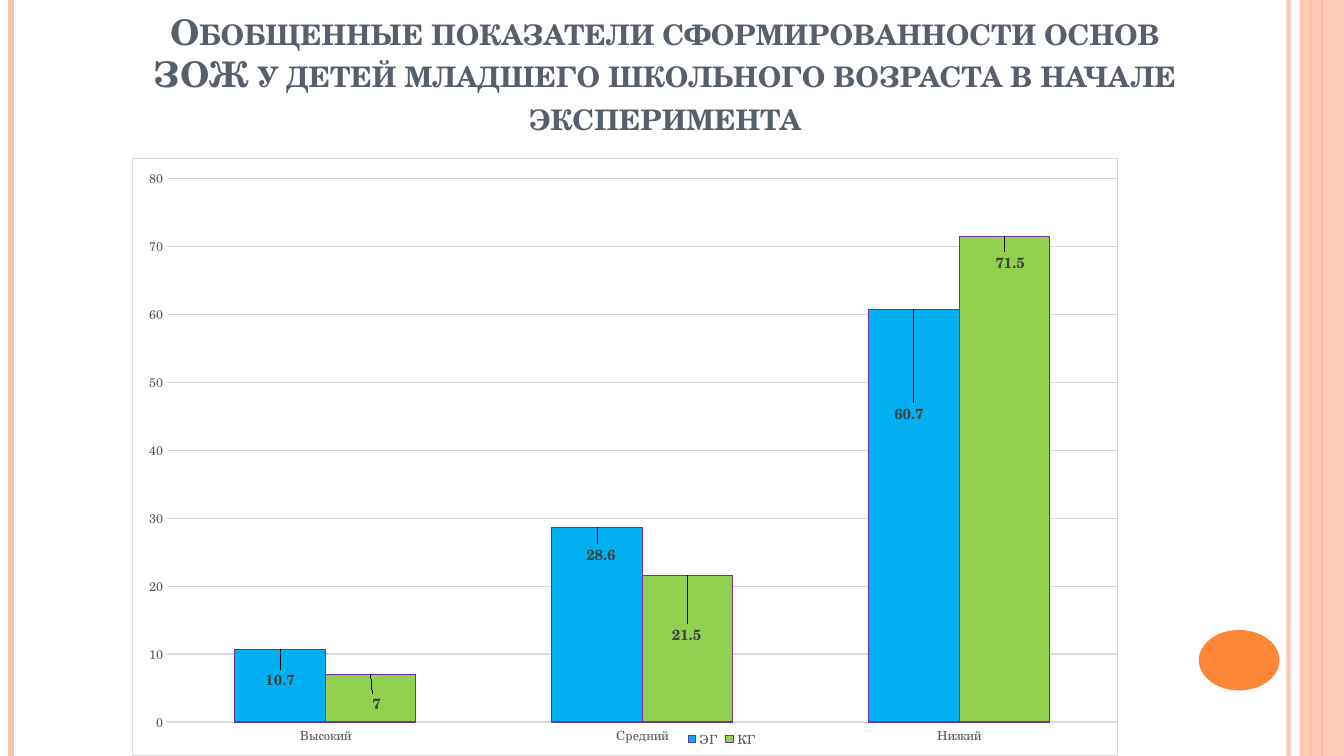
from dataclasses import dataclass

from lxml import etree
from pptx import Presentation
from pptx.chart.data import CategoryChartData
from pptx.dml.color import RGBColor
from pptx.enum.chart import (XL_CHART_TYPE, XL_LABEL_POSITION,
                             XL_LEGEND_POSITION, XL_TICK_MARK)
from pptx.enum.shapes import MSO_CONNECTOR, MSO_SHAPE
from pptx.enum.text import MSO_ANCHOR, PP_ALIGN
from pptx.oxml import parse_xml
from pptx.oxml.ns import nsdecls, qn
from pptx.util import Inches, Pt

COLUMNS = XL_CHART_TYPE.COLUMN_CLUSTERED
OUTSIDE = XL_LABEL_POSITION.OUTSIDE_END
BOTTOM = XL_LEGEND_POSITION.BOTTOM
NO_TICK = XL_TICK_MARK.NONE
STRAIGHT = MSO_CONNECTOR.STRAIGHT
WIDE, HIGH = 13.33, 7.5


@dataclass(frozen=True)
class Theme:
    font: str = "TeX Gyre Schola"
    title: str = "575F6D"
    peach: str = "FEC3AE"
    orange: str = "FE8637"
    axis: str = "595959"
    label: str = "404040"
    grid: str = "D9D9D9"
    edge: str = "7030A0"
    bars: tuple = ("00B0F0", "92D050")
    title_size: float = 25.2
    axis_size: float = 9
    label_size: float = 10.5
    hair: float = 0.75


THEME = Theme()
TITLE = ("Обобщенные показатели сформированности основ\v"
         "ЗОЖ у детей младшего школьного возраста в начале эксперимента")
LEVELS = ("Высокий", "Средний", "Низкий")
GROUPS = {"ЭГ": (10.7, 28.6, 60.7), "КГ": (7, 21.5, 71.5)}
# Label shifts from the bar end, as shares of the chart
SHIFTS = (((0, 0.077), (0.004, 0.07), (-0.005, 0.2)),
          ((0.006, 0.075), (-0.001, 0.124), (0.006, 0.069)))


def rgb(code):
    return RGBColor.from_string(code)


def set_font(font, size, color, bold=False):
    form = {"name": THEME.font, "size": Pt(size), "bold": bold}
    for key, value in form.items():
        setattr(font, key, value)
    font.color.rgb = rgb(color)


def set_line(line, color, width):
    line.color.rgb = rgb(color)
    line.width = Pt(width)


def fade(shape, share):
    """Set the opacity, in percent, of the first colour of a shape."""
    tone = next(shape._element.spPr.iter(qn("a:srgbClr")))
    etree.SubElement(tone, qn("a:alpha")).set("val", str(share * 1000))


def put_layout(node, index, **parts):
    """Give a chart node a manual layout as its child at index."""
    for old in node.findall(qn("c:layout")):
        node.remove(old)
    layout = etree.Element(qn("c:layout"))
    manual = etree.SubElement(layout, qn("c:manualLayout"))
    for key, value in parts.items():
        etree.SubElement(manual, qn("c:" + key)).set("val", str(value))
    node.insert(index, layout)


def add_frame(slide, wide, high):
    """Draw the side stripes and the dot."""
    shapes = slide.shapes
    stripes = ((wide - 0.55, THEME.peach, 3, 93), (0.11, THEME.peach, 4.5, 100),
               (wide - 0.22, THEME.orange, 1.5, 100),
               (wide - 0.33, THEME.orange, THEME.hair, 100))
    for x, color, width, share in stripes:
        line = shapes.add_connector(STRAIGHT, Inches(x), 0, Inches(x), Inches(high))
        set_line(line.line, color, width)
        etree.SubElement(line._element.spPr, qn("a:effectLst"))
        if share < 100:
            fade(line, share)
    blocks = ((MSO_SHAPE.RECTANGLE, (wide - 0.44, 0, 0.44, high), THEME.peach, 87),
              (MSO_SHAPE.OVAL, (wide - 1.44, high - 1.25, 0.8, 0.6),
               THEME.orange, 100))
    for kind, box, color, share in blocks:
        block = shapes.add_shape(kind, *map(Inches, box))
        block.shadow.inherit = False
        block.fill.solid()
        block.fill.fore_color.rgb = rgb(color)
        block.line.fill.background()
        if share < 100:
            fade(block, share)


def add_title(slide, box):
    title = slide.shapes.title
    for key, value in zip(("left", "top", "width", "height"), box):
        setattr(title, key, Inches(value))
    frame = title.text_frame
    frame.text = TITLE
    frame.word_wrap = True
    frame.vertical_anchor = MSO_ANCHOR.BOTTOM
    part = frame.paragraphs[0]
    part.alignment = PP_ALIGN.CENTER
    for run in part.runs:
        set_font(run.font, THEME.title_size, THEME.title, True)
        run._r.get_or_add_rPr().set("cap", "small")


def style_axes(chart):
    for axis in (chart.category_axis, chart.value_axis):
        axis.major_tick_mark = axis.minor_tick_mark = NO_TICK
        axis.format.line.fill.background()
        set_font(axis.tick_labels.font, THEME.axis_size, THEME.axis)
    scale = chart.value_axis
    form = {"minimum_scale": 0, "maximum_scale": 80, "major_unit": 10,
            "has_major_gridlines": True}
    for key, value in form.items():
        setattr(scale, key, value)
    set_line(scale.major_gridlines.format.line, THEME.grid, THEME.hair)


def style_bars(plot):
    form = {"gap_width": 150, "overlap": 0, "vary_by_categories": False}
    for key, value in form.items():
        setattr(plot, key, value)
    for series, color, shifts in zip(plot.series, THEME.bars, SHIFTS):
        series.format.fill.solid()
        series.format.fill.fore_color.rgb = rgb(color)
        set_line(series.format.line, THEME.edge, THEME.hair)
        labels = series.data_labels
        labels.show_value = True
        set_font(labels.font, THEME.label_size, THEME.label, True)
        for i in range(len(shifts)):
            label = series.points[i].data_label
            set_font(label.font, THEME.label_size, THEME.label, True)
            label.position = OUTSIDE
        for node, (x, y) in zip(series._element.iter(qn("c:dLbl")), shifts):
            put_layout(node, 1, x=x, y=y)


def add_chart(slide, box):
    data = CategoryChartData()
    data.categories = LEVELS
    for name, values in GROUPS.items():
        data.add_series(name, values)
    chart = slide.shapes.add_chart(COLUMNS, *map(Inches, box), data).chart
    chart.has_title = False
    set_font(chart.font, 10, "000000")
    style_axes(chart)
    style_bars(chart.plots[0])
    chart.has_legend = True
    legend = chart.legend
    legend.position = BOTTOM
    legend.include_in_layout = False
    set_font(legend.font, THEME.axis_size, THEME.axis)
    put_layout(legend._element, 1, xMode="edge", yMode="edge", x=0.56, y=0.95)
    core = chart._chartSpace.find(qn("c:chart"))
    put_layout(core.find(qn("c:plotArea")), 0, layoutTarget="inner",
               xMode="edge", yMode="edge", x=0.035, y=0.033, w=0.965, h=0.911)
    core.addnext(parse_xml(
        f'<c:spPr {nsdecls("c", "a")}>'
        '<a:solidFill><a:srgbClr val="FFFFFF"/></a:solidFill>'
        f'<a:ln w="{Pt(THEME.hair)}"><a:solidFill>'
        f'<a:srgbClr val="{THEME.grid}"/></a:solidFill></a:ln></c:spPr>'))


def main():
    deck = Presentation()
    deck.slide_width, deck.slide_height = Inches(WIDE), Inches(HIGH)
    slide = deck.slides.add_slide(deck.slide_layouts[5])
    add_frame(slide, WIDE, HIGH)
    add_title(slide, (0.68, 0.09, 11.83, 1.32))
    add_chart(slide, (1.31, 1.57, 9.78, HIGH - 1.57))
    deck.save("out.pptx")


if __name__ == "__main__":
    main()
